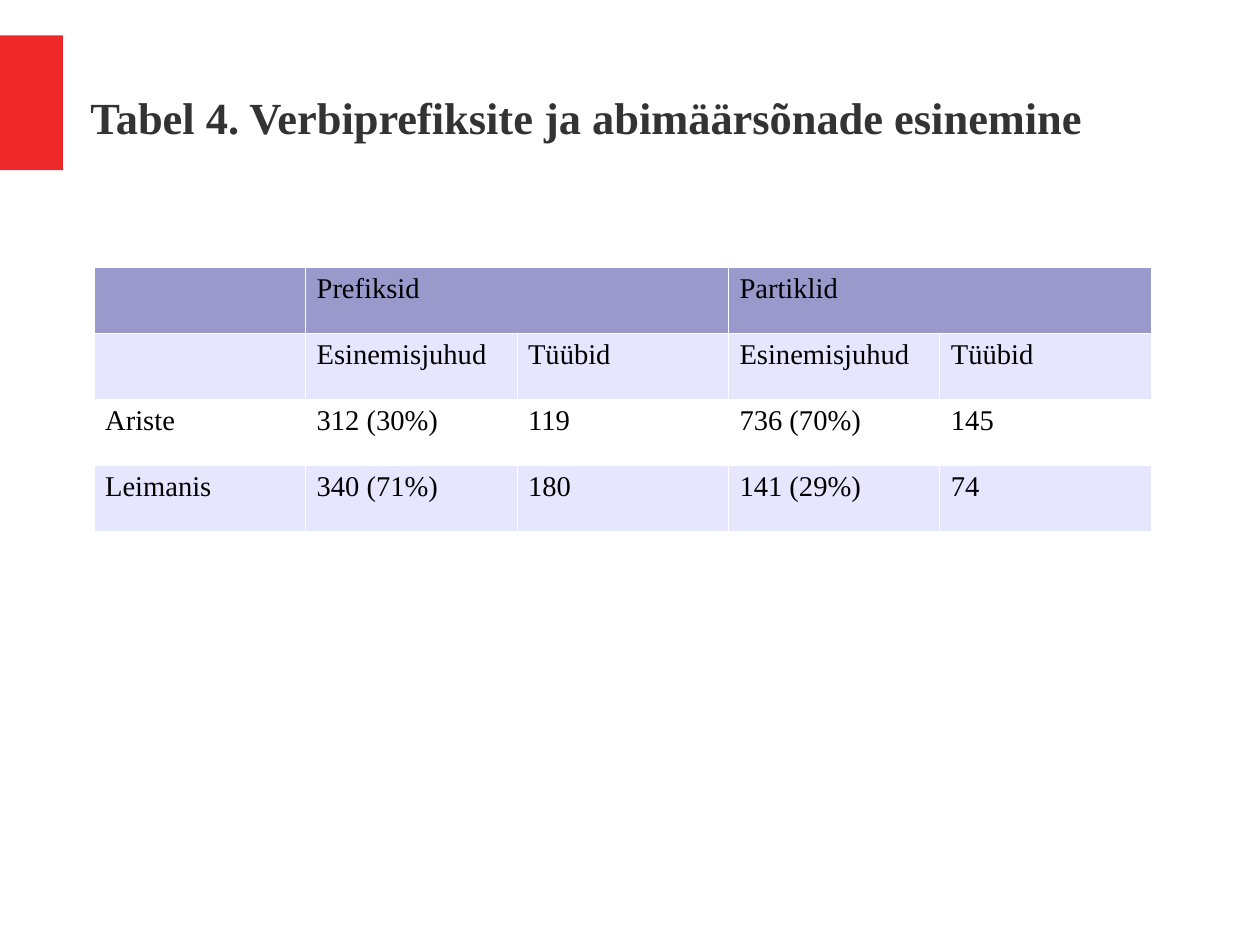
from dataclasses import dataclass

from lxml import etree
from pptx import Presentation
from pptx.dml.color import RGBColor
from pptx.enum.shapes import MSO_SHAPE
from pptx.enum.text import MSO_ANCHOR, PP_ALIGN
from pptx.oxml.ns import qn
from pptx.util import Cm, Inches, Pt

RECTANGLE = MSO_SHAPE.RECTANGLE
MIDDLE = MSO_ANCHOR.MIDDLE
LEFT = PP_ALIGN.LEFT
TITLE_ONLY = 5


@dataclass(frozen=True)
class Theme:
    font: str = "Times New Roman"
    title_size: int = 28
    cell_size: int = 18
    border_width: float = 0.06
    accent: str = "EF2929"
    title: str = "333333"
    text: str = "000000"
    header: str = "9999CC"
    band: str = "E6E6FF"
    white: str = "FFFFFF"


@dataclass(frozen=True)
class Area:
    left: float
    top: float
    width: float
    height: float

    def place(self) -> tuple:
        return tuple(Inches(n) for n in (self.left, self.top, self.width, self.height))


@dataclass(frozen=True)
class TableRow:
    texts: tuple
    fill: str
    merged: tuple = ()


THEME = Theme()
SLIDE_WIDTH, SLIDE_HEIGHT = Cm(28), Cm(21)
ACCENT_AREA = Area(0, 0.31, 0.55, 1.18)
TITLE_AREA = Area(0.79, 0.33, 9.68, 1.38)
TABLE_AREA = Area(0.82, 2.34, 9.25, 2.31)
TITLE = "Tabel 4. Verbiprefiksite ja abimäärsõnade esinemine"
ROWS = (
    TableRow(("", "Prefiksid", "", "Partiklid", ""), THEME.header, ((1, 2), (3, 4))),
    TableRow(("",) + ("Esinemisjuhud", "Tüübid") * 2, THEME.band),
    TableRow(("Ariste", "312 (30%)", "119", "736 (70%)", "145"), THEME.white),
    TableRow(("Leimanis", "340 (71%)", "180", "141 (29%)", "74"), THEME.band),
)
COLUMN_COUNT = len(ROWS[0].texts)


def color(code: str) -> RGBColor:
    return RGBColor.from_string(code)


def style_font(font, size: int, code: str, bold: bool = False) -> None:
    font.name, font.size, font.bold = THEME.font, Pt(size), bold
    font.color.rgb = color(code)


def set_slide_size(deck) -> None:
    deck.slide_width, deck.slide_height = SLIDE_WIDTH, SLIDE_HEIGHT
    # The default template labels its size as a 4:3 screen
    deck.element.find(qn("p:sldSz")).attrib.pop("type", None)


def add_accent(page) -> None:
    block = page.shapes.add_shape(RECTANGLE, *ACCENT_AREA.place())
    block.shadow.inherit = False
    block.fill.solid()
    block.fill.fore_color.rgb = color(THEME.accent)
    block.line.fill.background()


def set_title(page) -> None:
    box = page.shapes.title
    box.left, box.top, box.width, box.height = TITLE_AREA.place()
    frame = box.text_frame
    frame.text = TITLE
    frame.word_wrap = True
    frame.vertical_anchor = MIDDLE
    frame.margin_left = frame.margin_right = frame.margin_top = frame.margin_bottom = 0
    para = frame.paragraphs[0]
    para.alignment = LEFT
    style_font(para.font, THEME.title_size, THEME.title, bold=True)


def set_borders(cell) -> None:
    properties = cell._tc.get_or_add_tcPr()
    for side in ("a:lnL", "a:lnR", "a:lnT", "a:lnB"):
        line = etree.SubElement(properties, qn(side), w=str(int(Pt(THEME.border_width))))
        fill = etree.SubElement(line, qn("a:solidFill"))
        etree.SubElement(fill, qn("a:srgbClr"), val=THEME.white)


def fill_cell(cell, text: str, fill: str) -> None:
    cell.text = text
    cell.margin_left = cell.margin_right = Inches(0.1)
    cell.margin_top = cell.margin_bottom = Inches(0.05)
    style_font(cell.text_frame.paragraphs[0].font, THEME.cell_size, THEME.text)
    set_borders(cell)
    cell.fill.solid()
    cell.fill.fore_color.rgb = color(fill)


def add_results(page) -> None:
    frame = page.shapes.add_table(len(ROWS), COLUMN_COUNT, *TABLE_AREA.place())
    table = frame.table
    table.first_row = table.horz_banding = False
    for index, row in enumerate(ROWS):
        for position, text in enumerate(row.texts):
            fill_cell(table.cell(index, position), text, row.fill)
        for first, last in row.merged:
            table.cell(index, first).merge(table.cell(index, last))


def main() -> None:
    deck = Presentation()
    set_slide_size(deck)
    page = deck.slides.add_slide(deck.slide_layouts[TITLE_ONLY])

    # Heading with its red marker
    add_accent(page)
    set_title(page)

    # Counts of prefixes and particles by author
    add_results(page)

    deck.save("out.pptx")


if __name__ == "__main__":
    main()
